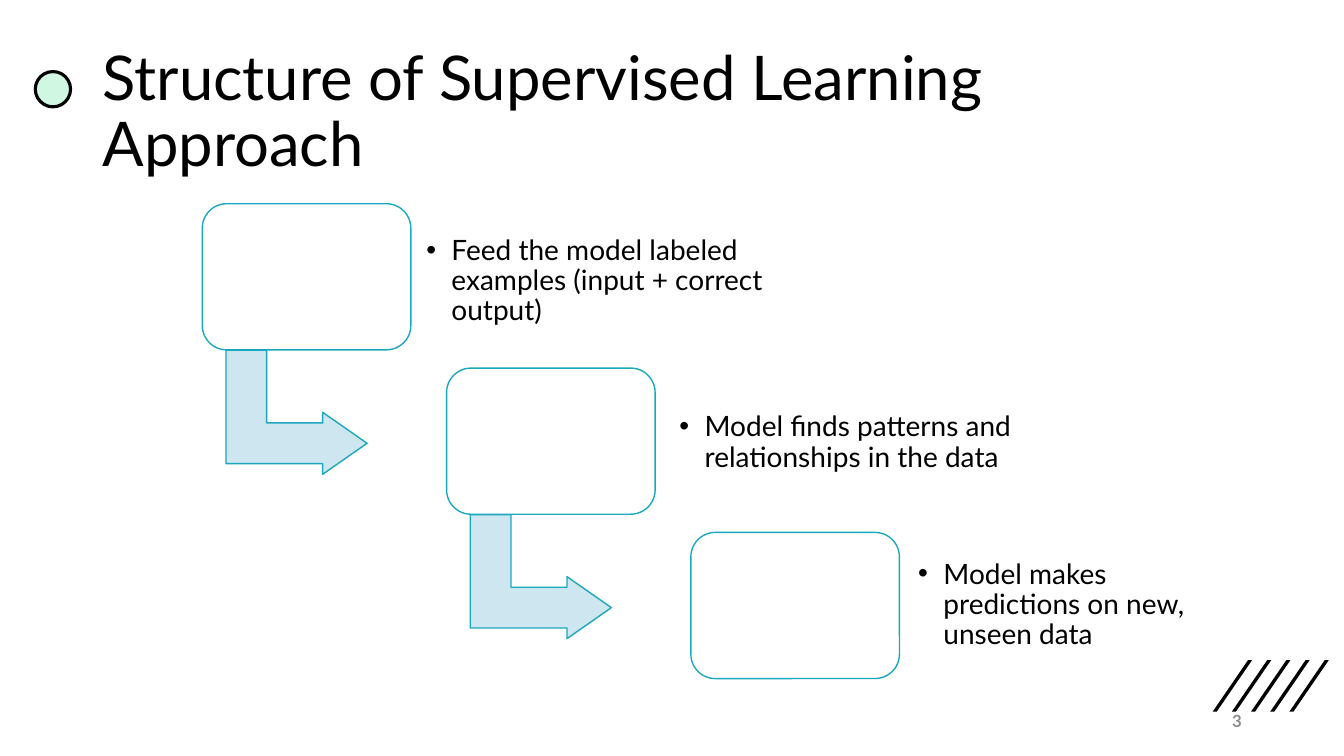
from lxml import etree
from pptx import Presentation
from pptx.dml.color import RGBColor
from pptx.enum import shapes, text
from pptx.oxml.ns import qn
from pptx.util import Pt

TITLE = "Structure of Supervised Learning Approach"
PAGE = "3"
# Step text with its left, top and width
STEPS = [
    ("Feed the model labeled examples (input + correct output)", 296.6, 159.1, 321.1),
    ("Model finds patterns and relationships in the data", 477.4, 274.3, 337),
    ("Model makes predictions on new, unseen data", 648, 390.2, 237.6),
]
COLORS = {"ink": "000000", "mint": "CFF7E1", "white": "FFFFFF",
          "pale": "CDE6EF", "teal": "1BA8BF", "gray": "8C8C8C"}
FONT = "Lato"
KIND = shapes.MSO_SHAPE

LEFT, TOP = 144.5, 145.5
STEP_X, STEP_Y = 174.5, 117.4
BOX_W, BOX_H = 149, 104.4
ARROW_DX, ARROW_DY, ARROW_W, ARROW_H = 23, 98.6, 88.6, 100.8
SLASHES, SLASH_GAP = 5, 13.7
SLASH_X, SLASH_Y, SLASH_W, SLASH_H, FOOT = 866.2, 471.6, 28.1, 36.7, 2.9


def rgb(name):
    return RGBColor.from_string(COLORS[name])


def add_shape(kind, x, y, w, h, fill, line, width, adjust=()):
    shape = slide.shapes.add_shape(kind, Pt(x), Pt(y), Pt(w), Pt(h))
    shape.shadow.inherit = False
    shape.fill.solid()
    shape.fill.fore_color.rgb = rgb(fill)
    shape.line.color.rgb = rgb(line)
    shape.line.width = Pt(width)
    for i, value in enumerate(adjust):
        shape.adjustments[i] = value
    return shape


def add_text(words, x, y, w, h, size, color="ink", bold=False, align="LEFT",
             inset=None, spacing=None, bullet=None, track=None):
    """Add a middle-anchored text box; bullet is a mark, track is in points."""
    frame = slide.shapes.add_textbox(Pt(x), Pt(y), Pt(w), Pt(h)).text_frame
    frame.word_wrap = True
    frame.vertical_anchor = text.MSO_ANCHOR.MIDDLE
    if inset is not None:
        frame.margin_left = frame.margin_right = Pt(inset)
        frame.margin_top = frame.margin_bottom = Pt(inset)
    para = frame.paragraphs[0]
    para.alignment = text.PP_ALIGN[align]
    if spacing:
        para.line_spacing = spacing
    if bullet:
        props = para._p.get_or_add_pPr()
        props.set("marL", str(Pt(18)))
        props.set("indent", str(Pt(-18)))
        etree.SubElement(props, qn("a:buFont")).set("typeface", "Arial")
        etree.SubElement(props, qn("a:buChar")).set("char", bullet)
    run = para.add_run()
    run.text = words
    run.font.name = FONT
    run.font.size = Pt(size)
    run.font.bold = bold
    run.font.color.rgb = rgb(color)
    if track:
        run.font._element.set("spc", str(track * 100))


def add_slash(x):
    path = slide.shapes.build_freeform(Pt(x + FOOT), Pt(SLASH_Y + SLASH_H))
    path.add_line_segments([
        (Pt(x), Pt(SLASH_Y + SLASH_H)),
        (Pt(x + SLASH_W - FOOT), Pt(SLASH_Y)),
        (Pt(x + SLASH_W), Pt(SLASH_Y)),
    ])
    slash = path.convert_to_shape()
    slash.shadow.inherit = False
    slash.fill.solid()
    slash.fill.fore_color.rgb = rgb("ink")
    slash.line.fill.background()


deck = Presentation()
deck.slide_width, deck.slide_height = Pt(960), Pt(540)
slide = deck.slides.add_slide(deck.slide_layouts[6])

for i in range(SLASHES):
    add_slash(SLASH_X + i * SLASH_GAP)
add_shape(KIND.OVAL, 25.2, 51.1, 25.2, 25.2, "mint", "ink", 2.25)
add_text(TITLE, 66.2, 28.8, 828, 104.4, 44, spacing=0.9)

for i, (words, x, y, w) in enumerate(STEPS):
    left, top = LEFT + i * STEP_X, TOP + i * STEP_Y
    if i < len(STEPS) - 1:
        arrow = add_shape(KIND.BENT_UP_ARROW, left + ARROW_DX, top + ARROW_DY,
                          ARROW_W, ARROW_H, "pale", "teal", 1, (0.328, 0.25, 0.358))
        arrow.rotation = 90
    add_shape(KIND.ROUNDED_RECTANGLE, left, top, BOX_W, BOX_H,
              "white", "teal", 1, (0.167,))
    add_text(words, x, y, w, 84.2, 20, inset=7.9, spacing=0.9, bullet="•")

add_text(PAGE, 678.2, 500.4, 216, 28.8, 12, "gray", bold=True, align="RIGHT", track=1)

deck.save("out.pptx")
